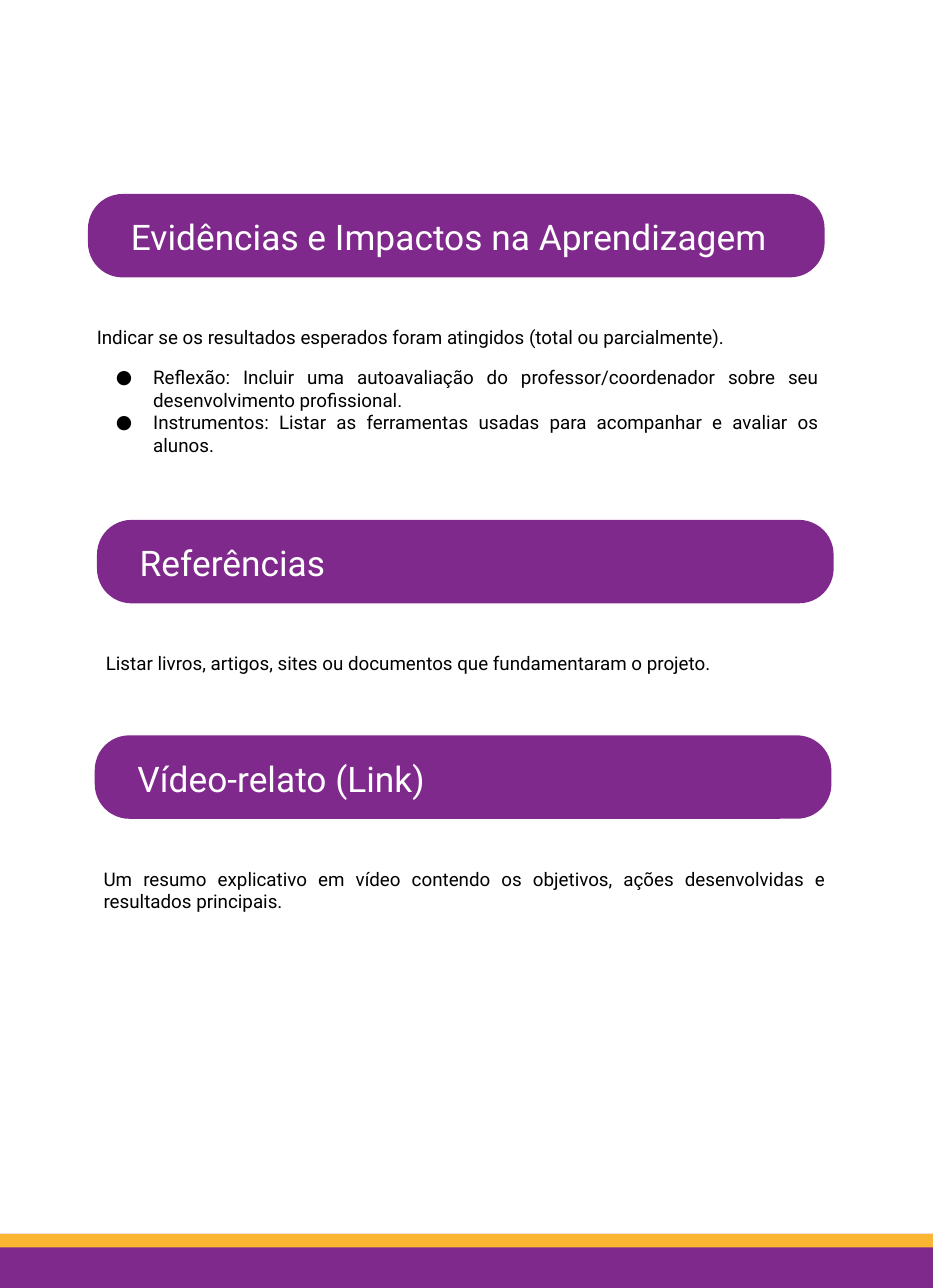
from dataclasses import dataclass

from lxml.etree import SubElement
from pptx import Presentation
from pptx.dml.color import RGBColor
from pptx.enum.shapes import MSO_SHAPE as Preset
from pptx.enum.text import MSO_ANCHOR as Anchor, MSO_AUTO_SIZE as AutoSize, PP_ALIGN as Align
from pptx.oxml.ns import qn
from pptx.util import Inches, Pt


@dataclass(frozen=True)
class Theme:
    purple: str = "80298D"
    amber: str = "FAB633"
    white: str = "FFFFFF"
    black: str = "000000"
    font: str = "Roboto"
    heading_size: float = 22.5
    body_size: float = 12
    bullet_gap: float = 11


THEME = Theme()
PAGE_WIDTH, PAGE_HEIGHT = 8.27, 11.42
BAR_WIDTH, BAR_HEIGHT = 6.53, 0.74
HEADING_INSET, HEADING_DROP = 0.28, 0.09
HEADING_WIDTH, HEADING_HEIGHT = 6.31, 0.58
BODY_OUTDENT, BODY_DROP, BODY_WIDTH = 0.02, 1.07, 6.6
FOOTER_TOP, STRIPE_HEIGHT = 10.94, 0.12

SECTIONS = [
    (0.78, 1.72, 2.08, "Evidências e Impactos na Aprendizagem",
     "Indicar se os resultados esperados foram atingidos (total ou parcialmente).",
     ["Reflexão: Incluir uma autoavaliação do professor/coordenador sobre seu "
      "desenvolvimento profissional.",
      "Instrumentos: Listar as ferramentas usadas para acompanhar e avaliar os alunos."]),
    (0.86, 4.61, 1.12, "Referências",
     "Listar livros, artigos, sites ou documentos que fundamentaram o projeto.", []),
    (0.84, 6.52, 1.32, "Vídeo-relato (Link)",
     "Um resumo explicativo em vídeo contendo os objetivos, ações desenvolvidas e "
     "resultados principais.", []),
]


def add_block(slide, preset, box, color):
    block = slide.shapes.add_shape(preset, *map(Inches, box))
    block.shadow.inherit = False
    block.fill.solid()
    block.fill.fore_color.rgb = RGBColor.from_string(color)
    block.line.fill.background()
    return block


def prepare_frame(frame):
    frame.word_wrap = True
    frame.auto_size = AutoSize.NONE
    frame.vertical_anchor = Anchor.TOP
    frame.margin_left = frame.margin_right = Inches(0.1)
    frame.margin_top = frame.margin_bottom = Inches(0.1)
    return frame


def add_text(paragraph, text, size, color, align):
    paragraph.alignment = align
    run = paragraph.add_run()
    run.text = text
    run.font.name = THEME.font
    run.font.size = Pt(size)
    run.font.color.rgb = RGBColor.from_string(color)


def add_bullet(paragraph):
    properties = paragraph._p.get_or_add_pPr()
    properties.set("marL", str(Inches(0.5)))
    properties.set("indent", str(Inches(-0.33)))
    bullet_color = SubElement(properties, qn("a:buClr"))
    SubElement(bullet_color, qn("a:srgbClr"), val=THEME.black)
    SubElement(properties, qn("a:buFont"), typeface=THEME.font)
    SubElement(properties, qn("a:buChar"), char="●")


def add_heading(slide, left, top, text, is_title):
    bar = add_block(slide, Preset.ROUNDED_RECTANGLE,
                    (left, top, BAR_WIDTH, BAR_HEIGHT), THEME.purple)
    bar.adjustments[0] = 0.415
    box = [Inches(length) for length in (left + HEADING_INSET, top + HEADING_DROP,
                                         HEADING_WIDTH, HEADING_HEIGHT)]
    if is_title:
        heading = slide.shapes.title
        heading.left, heading.top, heading.width, heading.height = box
        bar._element.addnext(heading._element)
    else:
        heading = slide.shapes.add_textbox(*box)
    frame = prepare_frame(heading.text_frame)
    add_text(frame.paragraphs[0], text, THEME.heading_size, THEME.white, Align.LEFT)


def add_body(slide, box, intro, bullets):
    frame = prepare_frame(slide.shapes.add_textbox(*map(Inches, box)).text_frame)
    add_text(frame.paragraphs[0], intro, THEME.body_size, THEME.black, Align.JUSTIFY)
    for position, bullet in enumerate(bullets):
        paragraph = frame.add_paragraph()
        add_bullet(paragraph)
        if position == 0:
            paragraph.space_before = Pt(THEME.bullet_gap)
        add_text(paragraph, bullet, THEME.body_size, THEME.black, Align.JUSTIFY)


def add_section(slide, left, top, body_height, heading, intro, bullets, is_title):
    add_heading(slide, left, top, heading, is_title)
    add_body(slide, (left - BODY_OUTDENT, top + BODY_DROP, BODY_WIDTH, body_height),
             intro, bullets)


def add_footer(slide):
    for height, color in ((PAGE_HEIGHT - FOOTER_TOP, THEME.purple),
                          (STRIPE_HEIGHT, THEME.amber)):
        add_block(slide, Preset.RECTANGLE, (0, FOOTER_TOP, PAGE_WIDTH, height), color)


def main():
    deck = Presentation()
    deck.slide_width, deck.slide_height = Inches(PAGE_WIDTH), Inches(PAGE_HEIGHT)
    slide = deck.slides.add_slide(deck.slide_layouts[5])
    slide.background.fill.solid()
    slide.background.fill.fore_color.rgb = RGBColor.from_string(THEME.white)
    add_footer(slide)
    for position, section in enumerate(SECTIONS):
        add_section(slide, *section, is_title=position == 0)
    deck.save("out.pptx")


if __name__ == "__main__":
    main()
